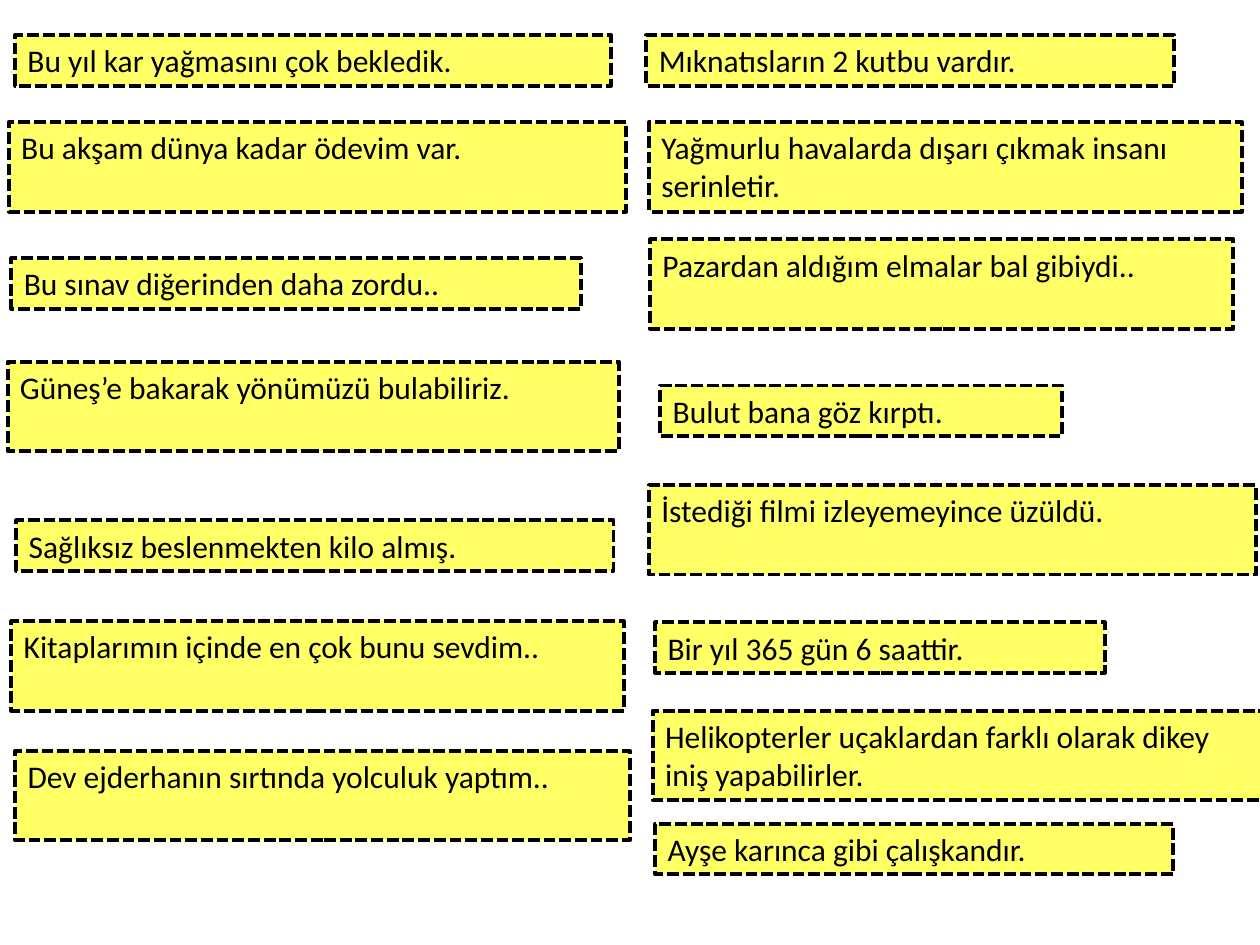
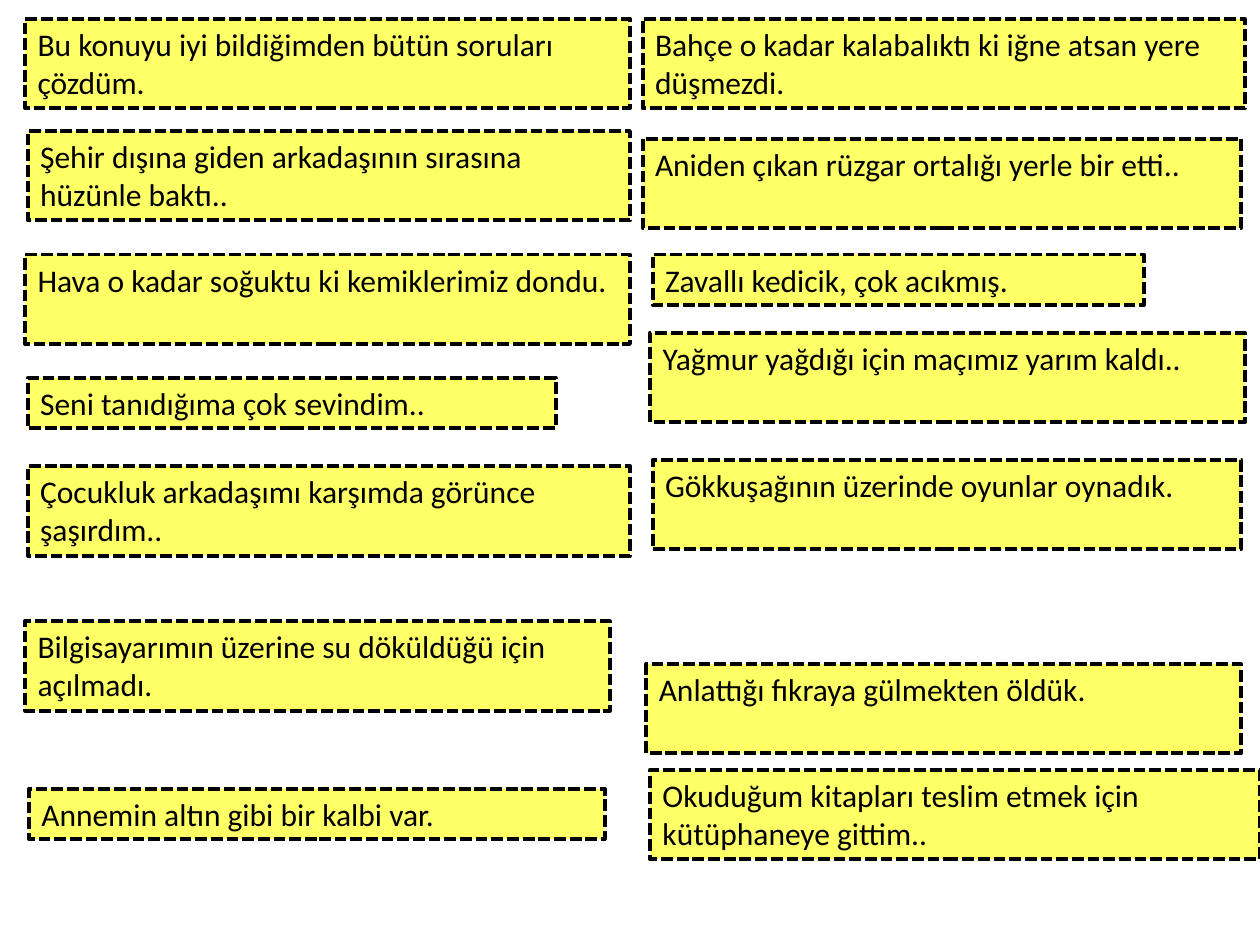
from pptx import Presentation
from pptx.dml.color import RGBColor
from pptx.enum.dml import MSO_LINE
from pptx.enum.text import MSO_ANCHOR, MSO_AUTO_SIZE
from pptx.util import Inches, Pt

# Sentence cards by slide and column: left, top, width, lines of room, sentence
SLIDES = [
    {
        "left column": [
            (0.12, 0.28, 4.73, 1, "Bu yıl kar yağmasını çok bekledik."),
            (0.07, 0.97, 4.9, 2, "Bu akşam dünya kadar ödevim var."),
            (0.09, 2.05, 4.52, 1, "Bu sınav diğerinden daha zordu.."),
            (0.06, 2.87, 4.85, 2, "Güneş’e bakarak yönümüzü bulabiliriz."),
            (0.13, 4.13, 4.74, 1, "Sağlıksız beslenmekten kilo almış."),
            (0.09, 4.93, 4.86, 2, "Kitaplarımın içinde en çok bunu sevdim.."),
            (0.12, 5.96, 4.88, 2, "Dev ejderhanın sırtında yolculuk yaptım.."),
        ],
        "right column": [
            (5.13, 0.28, 4.19, 1, "Mıknatısların 2 kutbu vardır."),
            (5.15, 0.97, 4.71, 2, "Yağmurlu havalarda dışarı çıkmak insanı serinletir."),
            (5.16, 1.9, 4.63, 2, "Pazardan aldığım elmalar bal gibiydi.."),
            (5.24, 3.06, 3.19, 1, "Bulut bana göz kırptı."),
            (5.15, 3.85, 4.82, 2, "İstediği filmi izleyemeyince üzüldü."),
            (5.2, 4.94, 3.57, 1, "Bir yıl 365 gün 6 saattir."),
            (5.18, 5.64, 4.89, 2, "Helikopterler uçaklardan farklı olarak dikey iniş yapabilirler."),
            (5.2, 6.54, 4.11, 1, "Ayşe karınca gibi çalışkandır."),
        ],
    },
    {
        "left column": [
            (0.2, 0.15, 4.8, 2, "Bu konuyu iyi bildiğimden bütün soruları çözdüm."),
            (0.22, 1.04, 4.78, 2, "Şehir dışına giden arkadaşının sırasına hüzünle baktı.."),
            (0.2, 2.02, 4.8, 2, "Hava o kadar soğuktu ki kemiklerimiz dondu."),
            (0.22, 3, 4.19, 1, "Seni tanıdığıma çok sevindim.."),
            (0.22, 3.7, 4.78, 2, "Çocukluk arkadaşımı karşımda görünce şaşırdım.."),
            (0.2, 4.93, 4.64, 2, "Bilgisayarımın üzerine su döküldüğü için açılmadı."),
            (0.23, 6.26, 4.57, 1, "Annemin altın gibi bir kalbi var."),
        ],
        "right column": [
            (5.1, 0.15, 4.78, 2, "Bahçe o kadar kalabalıktı ki iğne atsan yere düşmezdi."),
            (5.1, 1.1, 4.75, 2, "Aniden çıkan rüzgar ortalığı yerle bir etti.."),
            (5.18, 2.02, 3.9, 1, "Zavallı kedicik, çok acıkmış."),
            (5.16, 2.64, 4.72, 2, "Yağmur yağdığı için maçımız yarım kaldı.."),
            (5.18, 3.65, 4.67, 2, "Gökkuşağının üzerinde oyunlar oynadık."),
            (5.13, 5.27, 4.72, 2, "Anlattığı fıkraya gülmekten öldük."),
            (5.16, 6.11, 4.84, 2, "Okuduğum kitapları teslim etmek için kütüphaneye gittim.."),
        ],
    },
]

# Shared look of every card
COLORS = {"card": "FFFF66", "ink": "000000"}
CARD_HEIGHTS = {1: 0.4, 2: 0.71}
FRAME_FORMAT = {
    "word_wrap": True,
    "auto_size": MSO_AUTO_SIZE.NONE,
    "vertical_anchor": MSO_ANCHOR.TOP,
}
BORDER_FORMAT = {"width": Pt(2.25), "dash_style": MSO_LINE.SQUARE_DOT}
FONT_FORMAT = {"name": "Calibri", "size": Pt(18)}


def color(name):
    return RGBColor.from_string(COLORS[name])


def apply_format(target, values):
    for attribute, value in values.items():
        setattr(target, attribute, value)


def add_card(slide, left, top, width, lines, sentence):
    box = (left, top, width, CARD_HEIGHTS[lines])
    card = slide.shapes.add_textbox(*map(Inches, box))

    # Yellow fill with a dashed border
    card.fill.solid()
    card.fill.fore_color.rgb = color("card")
    card.line.color.rgb = color("ink")
    apply_format(card.line, BORDER_FORMAT)

    # Sentence
    apply_format(card.text_frame, FRAME_FORMAT)
    run = card.text_frame.paragraphs[0].add_run()
    run.text = sentence
    run.font.color.rgb = color("ink")
    apply_format(run.font, FONT_FORMAT)


def main():
    deck = Presentation()
    deck.slide_width, deck.slide_height = Inches(10), Inches(7.5)
    blank_layout = deck.slide_layouts[6]
    for columns in SLIDES:
        slide = deck.slides.add_slide(blank_layout)
        for cards in columns.values():
            for card in cards:
                add_card(slide, *card)
    deck.save("out.pptx")


if __name__ == "__main__":
    main()
